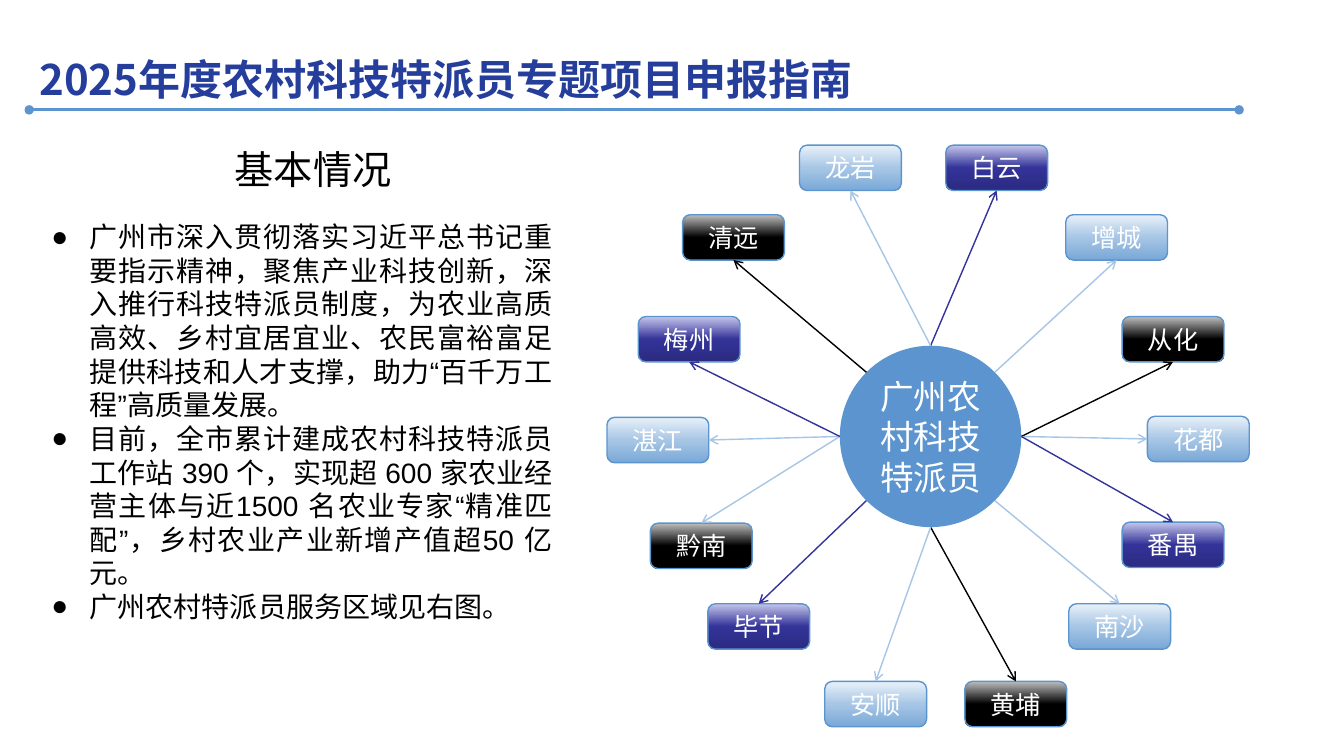
from math import cos, radians, sin

from lxml import etree
from pptx import Presentation
from pptx import util as u
from pptx.dml.color import RGBColor
from pptx.enum import shapes, text
from pptx.oxml import parse_xml
from pptx.oxml.ns import nsdecls, qn

PX = 9144  # EMU per px, 100 px to the inch

THEME = {
    "title": "263E9B", "body": "000000", "white": "FFFFFF", "accent": "5B94CE",
    "cjk": "Noto Sans CJK SC", "latin": "Arial",
    "title_size": 30, "heading_size": 28, "hub_size": 24, "body_size": 20, "box_size": 18,
    # Box gradients, whose middle colour is also the colour of the spoke
    "light": ("E9F1F9", "A7C6E5", "79A8D7"),
    "dark": ("BFBFBF", "000000", "000000"),
    "navy": ("C6C6EC", "333399", "2B2B82"),
}


def style_text(shape, content, font_name, size, color, bold=False, align=None):
    frame = shape.text_frame
    frame.word_wrap = True
    frame.text = content
    for paragraph in frame.paragraphs:
        paragraph.alignment = align
        paragraph.space_before = u.Pt(0)
        for run in paragraph.runs:
            font = run.font
            font.name, font.size, font.bold = font_name, u.Pt(size), bold
            font.color.rgb = RGBColor.from_string(color)
            east_asian = etree.SubElement(font._element, qn("a:ea"))
            east_asian.set("typeface", font_name)
    return frame


def add_line(start, end, color, width, **ends):
    line = slide.shapes.add_connector(
        shapes.MSO_CONNECTOR.STRAIGHT, *[round(value * PX) for value in (*start, *end)])
    line.line.color.rgb = RGBColor.from_string(color)
    line.line.width = u.Pt(width)
    for tag, kind in ends.items():
        etree.SubElement(line.line._get_or_add_ln(), qn(f"a:{tag}")).set("type", kind)
    etree.SubElement(line._element.spPr, qn("a:effectLst"))
    return line


presentation = Presentation()
presentation.slide_width, presentation.slide_height = 1333 * PX, 750 * PX
slide = presentation.slides.add_slide(presentation.slide_layouts[1])
title, body = slide.placeholders

# Title and its rule
add_line((29, 109), (1229, 109), THEME["accent"], 2.25, headEnd="oval", tailEnd="oval")
title.left, title.top, title.width, title.height = [v * PX for v in (29, 23, 1069, 86)]
title_frame = style_text(title, "2025年度农村科技特派员专题项目申报指南", THEME["cjk"],
                         THEME["title_size"], THEME["title"], True, text.PP_ALIGN.LEFT)
title_frame.vertical_anchor = text.MSO_ANCHOR.TOP
title_frame.auto_size = text.MSO_AUTO_SIZE.SHAPE_TO_FIT_TEXT
title_frame.paragraphs[0].line_spacing = 1.5

# Heading and bullet list
heading = slide.shapes.add_textbox(*[v * PX for v in (223, 139, 218, 57)])
style_text(heading, "基本情况", THEME["cjk"], THEME["heading_size"], THEME["body"])

body.left, body.top, body.width, body.height = [v * PX for v in (41, 213, 517, 463)]
points = [
    "广州市深入贯彻落实习近平总书记重要指示精神，聚焦产业科技创新，深入推行科技特派员制度，"
    "为农业高质高效、乡村宜居宜业、农民富裕富足提供科技和人才支撑，助力“百千万工程”高质量发展。",
    "目前，全市累计建成农村科技特派员工作站 390 个，实现超 600 家农业经营主体与近1500 名农业专家"
    "“精准匹配”，乡村农业产业新增产值超50 亿元。",
    "广州农村特派员服务区域见右图。",
]
body_frame = style_text(body, "\n".join(points), THEME["latin"], THEME["body_size"],
                        THEME["body"], align=text.PP_ALIGN.JUSTIFY)
body_frame.auto_size = text.MSO_AUTO_SIZE.NONE
for paragraph in body_frame.paragraphs:
    properties = paragraph._p.get_or_add_pPr()
    properties.set("marL", str(38 * PX))
    properties.set("indent", str(-38 * PX))
    etree.SubElement(properties, qn("a:buFont")).set("typeface", THEME["latin"])
    etree.SubElement(properties, qn("a:buChar")).set("char", "●")

# Hub
HUB_X, HUB_Y, RADIUS = 923, 433, 90
hub = slide.shapes.add_shape(
    shapes.MSO_SHAPE.OVAL, (HUB_X - RADIUS) * PX, (HUB_Y - RADIUS) * PX,
    2 * RADIUS * PX, 2 * RADIUS * PX)
hub.shadow.inherit = False
hub.fill.solid()
hub.fill.fore_color.rgb = RGBColor.from_string(THEME["accent"])
hub.line.fill.background()
style_text(hub, "广州农村科技特派员", THEME["cjk"], THEME["hub_size"], THEME["white"],
           align=text.PP_ALIGN.CENTER).vertical_anchor = text.MSO_ANCHOR.MIDDLE

# Regions clockwise: name, left, top, colour, box side joined, angle on the hub
BOX_WIDTH, BOX_HEIGHT = 101, 45
TOP, LEFT, BOTTOM, RIGHT = range(4)
regions = [
    ("白云", 938, 144, "navy", BOTTOM, -90),
    ("增城", 1057, 213, "light", BOTTOM, -45),
    ("从化", 1113, 314, "dark", BOTTOM, 0),
    ("花都", 1138, 413, "light", LEFT, 0),
    ("番禺", 1113, 518, "navy", TOP, 0),
    ("南沙", 1060, 599, "light", TOP, 45),
    ("黄埔", 957, 676, "dark", TOP, 90),
    ("安顺", 818, 676, "light", TOP, 90),
    ("毕节", 702, 599, "navy", TOP, 135),
    ("黔南", 645, 519, "dark", TOP, 180),
    ("湛江", 602, 414, "light", RIGHT, 180),
    ("梅州", 633, 314, "navy", BOTTOM, 180),
    ("清远", 677, 213, "dark", BOTTOM, 225),
    ("龙岩", 793, 144, "light", BOTTOM, -90),
]
for name, left, top, palette, side, angle in regions:
    box = slide.shapes.add_shape(
        shapes.MSO_SHAPE.FLOWCHART_ALTERNATE_PROCESS,
        left * PX, top * PX, BOX_WIDTH * PX, BOX_HEIGHT * PX)
    box.shadow.inherit = False
    stops = "".join(f'<a:gs pos="{i * 50000}"><a:srgbClr val="{color}"/></a:gs>'
                    for i, color in enumerate(THEME[palette]))
    gradient = parse_xml(f'<a:gradFill {nsdecls("a")}><a:gsLst>{stops}</a:gsLst>'
                         '<a:lin ang="5400000" scaled="0"/></a:gradFill>')
    box._element.spPr.find(qn("a:prstGeom")).addnext(gradient)
    box.line.color.rgb = RGBColor.from_string(THEME["accent"])
    box.line.width = u.Pt(1)
    style_text(box, name, THEME["latin"], THEME["box_size"], THEME["white"],
               align=text.PP_ALIGN.CENTER).vertical_anchor = text.MSO_ANCHOR.MIDDLE

    # Spoke from the hub's edge to the box; the guangzhou-side hue lives on the black box's spoke too
    spoke_color = THEME["light"][1] if name == "黔南" else THEME[palette][1]
    edge = (HUB_X + RADIUS * cos(radians(angle)), HUB_Y + RADIUS * sin(radians(angle)))
    spoke = add_line(edge, (left, top), spoke_color, 1, tailEnd="arrow")
    spoke.end_connect(box, side)

presentation.save("out.pptx")
